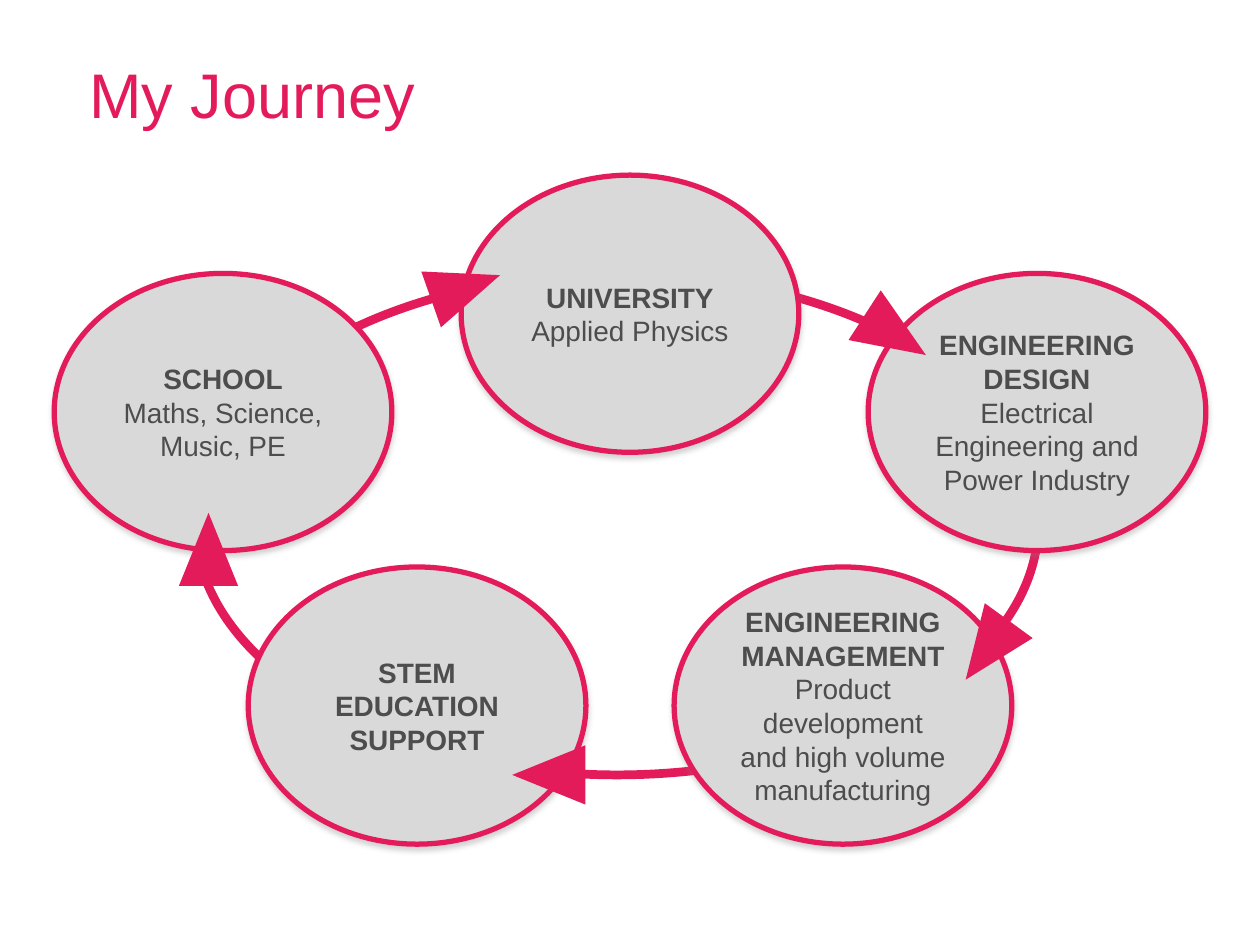
from dataclasses import dataclass

from lxml import etree
from pptx import Presentation
from pptx.dml.color import RGBColor
from pptx.enum import shapes, text
from pptx.oxml import ns
from pptx.util import Inches, Pt


@dataclass(frozen=True)
class Theme:
    accent: RGBColor = RGBColor(0xE4, 0x1B, 0x5B)
    stage_fill: RGBColor = RGBColor(0xD9, 0xD9, 0xD9)
    body: RGBColor = RGBColor(0x4D, 0x4D, 0x4D)
    shadow: str = "808080"
    font: str = "Arial"
    title_size: Pt = Pt(36)
    body_size: Pt = Pt(16)
    ring_width: Pt = Pt(5)
    outline_width: Pt = Pt(3)


THEME = Theme()
STAGE_SIZE = (2.68, 2.2)
ARROW_SIZE = (0.47, 0.58)
RING_BOX = (1.55, 2.17, 6.69, 3.98)
TITLE_BOX = (0.71, 0.39, 8.57, 1.01)

STAGES = [
    (5.35, 4.5, "ENGINEERING MANAGEMENT", "Product development and high volume manufacturing"),
    (3.66, 1.39, "UNIVERSITY", "Applied Physics"),
    (6.89, 2.17, "ENGINEERING DESIGN", "Electrical Engineering and Power Industry"),
    (0.43, 2.17, "SCHOOL", "Maths, Science, Music, PE"),
    (1.97, 4.5, "STEM EDUCATION SUPPORT", None),
]

ARROWS = [
    (3.46, 1.99, 70.6),
    (1.42, 4.07, 0),
    (4.12, 5.86, 270),
    (7.6, 4.87, 216.1),
    (6.87, 2.37, 123),
]


def inches(box):
    return [Inches(length) for length in box]


def style_paragraph(paragraph, size, color, bold=False):
    font = paragraph.font
    font.name = THEME.font
    font.size = size
    font.bold = bold
    font.color.rgb = color


def add_soft_shadow(shape):
    shape.shadow.inherit = False
    effects = shape._element.spPr.find(ns.qn("a:effectLst"))
    shadow = etree.SubElement(
        effects, ns.qn("a:outerShdw"),
        blurRad=str(Pt(3.1)), dist=str(Pt(1.8)), dir=str(90 * 60000),
        rotWithShape="0")
    color = etree.SubElement(shadow, ns.qn("a:srgbClr"), val=THEME.shadow)
    etree.SubElement(color, ns.qn("a:alpha"), val="35000")


def place_title(slide, box, wording):
    title = slide.shapes.title
    title.left, title.top, title.width, title.height = inches(box)
    frame = title.text_frame
    frame.margin_left = frame.margin_right = frame.margin_bottom = 0
    frame.margin_top = Inches(0.05)
    frame.vertical_anchor = text.MSO_ANCHOR.TOP
    frame.text = wording
    heading = frame.paragraphs[0]
    heading.alignment = text.PP_ALIGN.LEFT
    style_paragraph(heading, THEME.title_size, THEME.accent)


def place_ring(slide, box):
    ring = slide.shapes.add_shape(shapes.MSO_SHAPE.OVAL, *inches(box))
    ring.shadow.inherit = False
    ring.fill.background()
    ring.line.color.rgb = THEME.accent
    ring.line.width = THEME.ring_width


def place_stage(slide, box, heading, detail):
    stage = slide.shapes.add_shape(shapes.MSO_SHAPE.OVAL, *inches(box))
    stage.fill.solid()
    stage.fill.fore_color.rgb = THEME.stage_fill
    stage.line.color.rgb = THEME.accent
    stage.line.width = THEME.outline_width
    add_soft_shadow(stage)
    frame = stage.text_frame
    frame.word_wrap = True
    frame.vertical_anchor = text.MSO_ANCHOR.MIDDLE
    frame.text = "\n".join(filter(None, (heading, detail)))
    for index, paragraph in enumerate(frame.paragraphs):
        paragraph.alignment = text.PP_ALIGN.CENTER
        style_paragraph(paragraph, THEME.body_size, THEME.body, bold=index == 0)


def place_arrow(slide, box, rotation):
    arrow = slide.shapes.add_shape(shapes.MSO_SHAPE.ISOSCELES_TRIANGLE, *inches(box))
    arrow.shadow.inherit = False
    arrow.rotation = rotation
    arrow.fill.solid()
    arrow.fill.fore_color.rgb = THEME.accent
    arrow.line.fill.background()


def build_journey(slide):
    place_title(slide, TITLE_BOX, "My Journey")
    place_ring(slide, RING_BOX)
    for left, top, heading, detail in STAGES:
        place_stage(slide, (left, top, *STAGE_SIZE), heading, detail)
    for left, top, rotation in ARROWS:
        place_arrow(slide, (left, top, *ARROW_SIZE), rotation)


def main():
    deck = Presentation()
    deck.slide_width, deck.slide_height = Inches(10), Inches(7.5)
    title_only = deck.slide_layouts.get_by_name("Title Only")
    build_journey(deck.slides.add_slide(title_only))
    deck.save("out.pptx")


if __name__ == "__main__":
    main()
